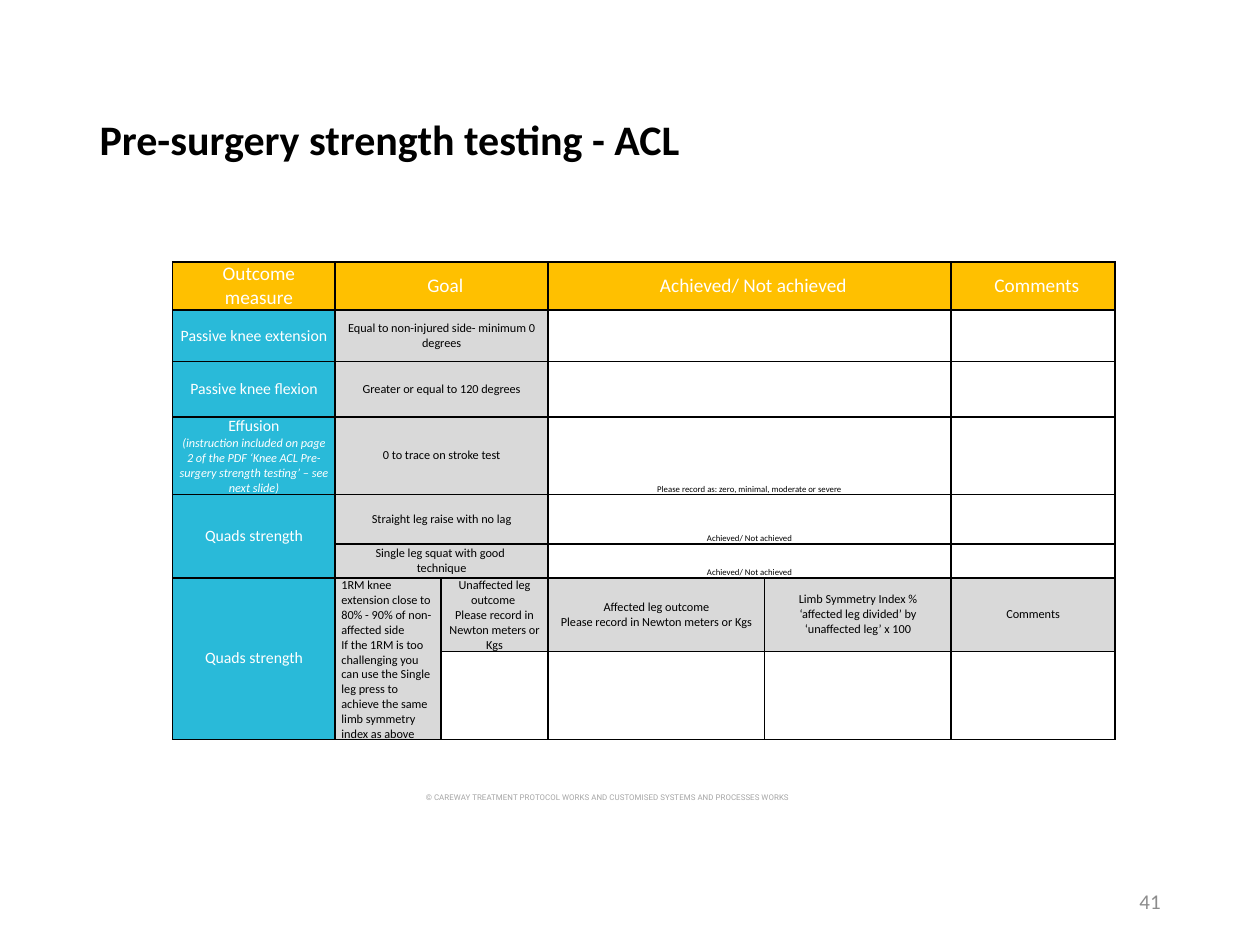
"""Build the pre-surgery ACL strength testing slide."""
from lxml import etree
from pptx import Presentation, util as u
from pptx.dml.color import RGBColor
from pptx.enum import text
from pptx.oxml.ns import qn

WHITE, BLACK, GOLD, TEAL, GREY = "FFFFFF", "000000", "FFC000", "29BAD9", "D9D9D9"
CENTER, LEFT, RIGHT = text.PP_ALIGN.CENTER, text.PP_ALIGN.LEFT, text.PP_ALIGN.RIGHT
MIDDLE, BOTTOM = text.MSO_ANCHOR.MIDDLE, text.MSO_ANCHOR.BOTTOM


def rgb(value):
    return RGBColor.from_string(value)


def style(paragraph, size, color, align, font="Calibri"):
    paragraph.alignment = align
    paragraph.font.size = u.Pt(size)
    paragraph.font.name = font
    paragraph.font.color.rgb = rgb(color)


deck = Presentation()
deck.slide_width, deck.slide_height = u.Inches(10), u.Inches(7.5)
slide = deck.slides.add_slide(deck.slide_layouts[5])

title = slide.shapes.title
title.left, title.top, title.width, title.height = map(u.Inches, (0.69, 0.4, 8.62, 1.45))
title.text_frame.text = "Pre-surgery strength testing - ACL"
title.text_frame.vertical_anchor = MIDDLE
heading = title.text_frame.paragraphs[0]
style(heading, 24, BLACK, LEFT)
heading.font.bold = True
heading.line_spacing = 0.9

footers = [
    ("41", (7.06, 6.95, 2.25, 0.4), (0.1, 0.05), 12, "8C8C8C", RIGHT, "Calibri", 1),
    ("© CAREWAY TREATMENT PROTOCOL WORKS AND CUSTOMISED SYSTEMS AND PROCESSES WORKS",
     (3.31, 6.23, 3.66, 0.21), (0.07, 0.04), 4.5, "A5A5A5", LEFT, "Roboto", 0.9),
]
for words, place, (side, edge), size, color, align, font, spacing in footers:
    frame = slide.shapes.add_textbox(*map(u.Inches, place)).text_frame
    frame.word_wrap = True
    frame.vertical_anchor = MIDDLE
    frame.margin_left = frame.margin_right = u.Inches(side)
    frame.margin_top = frame.margin_bottom = u.Inches(edge)
    frame.text = words
    style(frame.paragraphs[0], size, color, align, font)
    frame.paragraphs[0].line_spacing = spacing

columns = [1.29, 0.84, 0.85, 1.72, 1.48, 1.3]
rows = [0.38, 0.41, 0.44, 0.6, 0.39, 0.27, 0.56, 0.68]
outcomes = slide.shapes.add_table(
    len(rows), len(columns), *map(u.Inches, (1.37, 2.08, sum(columns), sum(rows)))).table
for column, width in zip(outcomes.columns, columns):
    column.width = u.Inches(width)
for row, height in zip(outcomes.rows, rows):
    row.height = u.Inches(height)

header = (GOLD, WHITE, 11, CENTER, MIDDLE)
measure = (TEAL, WHITE, 9, CENTER, MIDDLE)
goal = (GREY, BLACK, 7, CENTER, MIDDLE)
protocol = (GREY, BLACK, 7, LEFT, MIDDLE)
answer = (WHITE, BLACK, 5, CENTER, BOTTOM)

content = {
    (0, 0): (header, "Outcome measure"),
    (0, 1): (header, "Goal"),
    (0, 3): (header, "Achieved/ Not achieved"),
    (0, 5): (header, "Comments"),
    (1, 0): (measure, "Passive knee extension"),
    (1, 1): (goal, "Equal to non-injured side- minimum 0 degrees"),
    (2, 0): (measure, "Passive knee flexion"),
    (2, 1): (goal, "Greater or equal to 120 degrees"),
    (3, 0): (measure, "Effusion\n(instruction included on page 2 of the PDF ‘Knee ACL "
                      "Pre-surgery strength testing’ – see next slide)"),
    (3, 1): (goal, "0 to trace on stroke test"),
    (3, 3): (answer, "Please record as: zero, minimal, moderate or severe"),
    (4, 0): (measure, "Quads strength"),
    (4, 1): (goal, "Straight leg raise with no lag"),
    (4, 3): (answer, "Achieved/ Not achieved"),
    (5, 1): (goal, "Single leg squat with good \ntechnique"),
    (5, 3): (answer, "Achieved/ Not achieved"),
    (6, 0): (measure, "Quads strength"),
    (6, 1): (protocol, "1RM knee extension close to 80% - 90% of non-affected side\n"
                       "If the 1RM is too challenging you can use the Single leg press to "
                       "achieve the same limb symmetry index as above"),
    (6, 2): (goal, "Unaffected leg outcome \nPlease record in Newton meters or Kgs"),
    (6, 3): (goal, "Affected leg outcome\nPlease record in Newton meters or Kgs"),
    (6, 4): (goal, "Limb Symmetry Index %\n‘affected leg divided’ by ‘unaffected leg’ x 100"),
    (6, 5): (goal, "Comments"),
}

for r in range(6):
    for c in (1, 3):
        outcomes.cell(r, c).merge(outcomes.cell(r, c + 1))
for r, c in ((4, 0), (6, 0), (6, 1)):
    outcomes.cell(r, c).merge(outcomes.cell(r + 1, c))

for r in range(len(rows)):
    for c in range(len(columns)):
        cell = outcomes.cell(r, c)
        (fill, color, size, align, anchor), words = content.get((r, c), (answer, ""))
        cell.text = words
        cell.vertical_anchor = anchor
        cell.margin_left = cell.margin_right = u.Inches(0.05)
        cell.margin_top = cell.margin_bottom = 0
        for paragraph in cell.text_frame.paragraphs:
            style(paragraph, size, color, align)
            if r == 0:
                paragraph._p.get_or_add_pPr().set("marL", str(u.Inches(0.08 if c == 0 else 0.06)))
            if not words:
                paragraph._p.get_or_add_endParaRPr().set("sz", str(size * 100))
        properties = cell._tc.get_or_add_tcPr()
        for side in ("a:lnL", "a:lnR", "a:lnT", "a:lnB"):
            border = etree.SubElement(properties, qn(side), w=str(u.Pt(1)))
            paint = etree.SubElement(border, qn("a:solidFill"))
            etree.SubElement(paint, qn("a:srgbClr"), val=BLACK)
        cell.fill.solid()
        cell.fill.fore_color.rgb = rgb(fill)

instruction = outcomes.cell(3, 0).text_frame.paragraphs[1]
instruction.font.size = u.Pt(7)
instruction.font.italic = True

deck.save("out.pptx")
